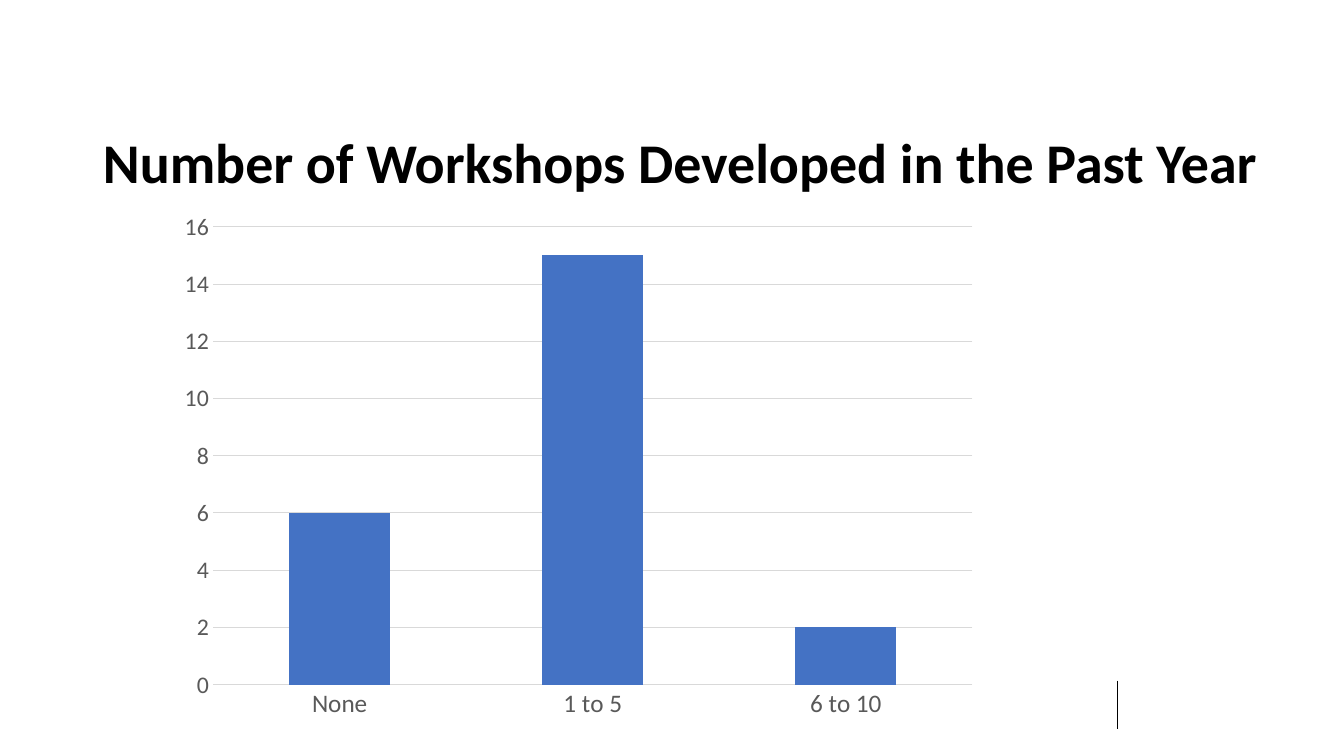
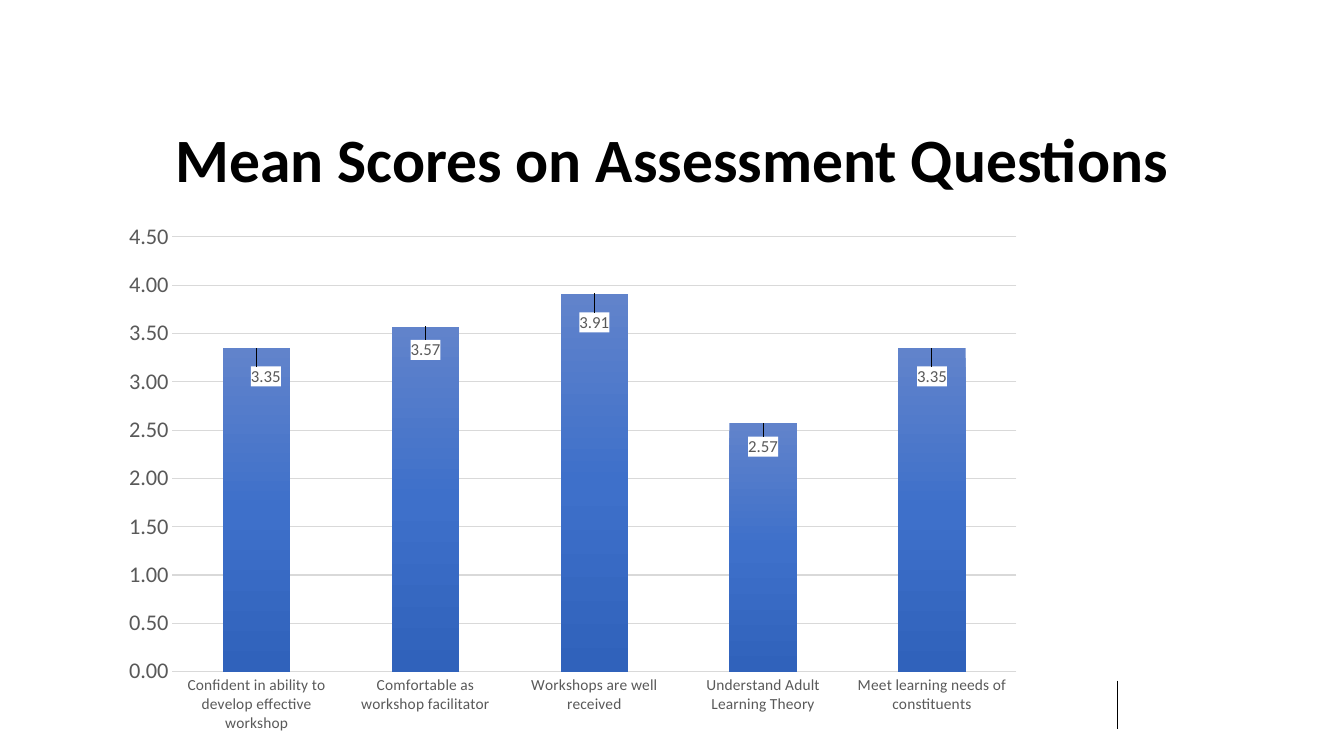
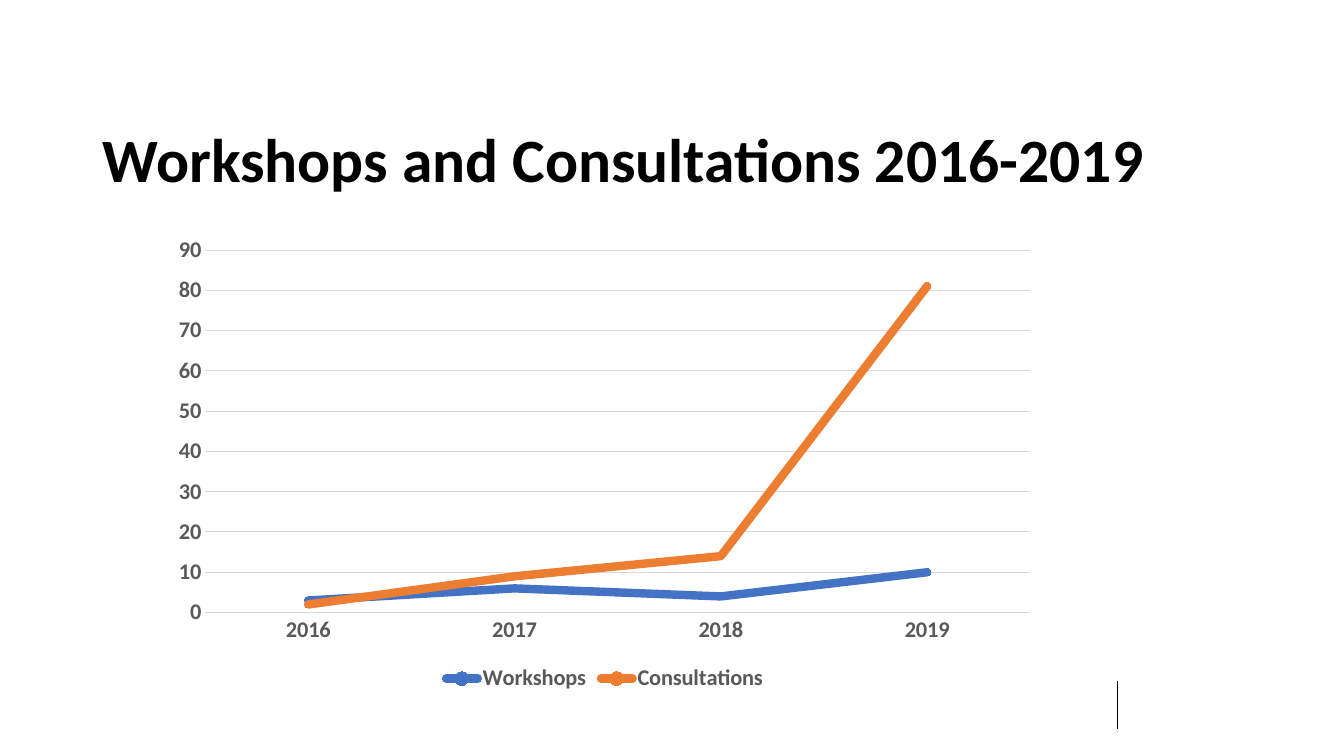
"""Build three slides of workshop assessment charts."""
import copy
import dataclasses
import typing

import pptx
import pptx.chart.data
import pptx.dml.color
import pptx.enum.chart
import pptx.enum.shapes
import pptx.enum.text
import pptx.oxml
import pptx.oxml.ns
import pptx.util

Cm = pptx.util.Cm
Pt = pptx.util.Pt
qn = pptx.oxml.ns.qn
ChartType = pptx.enum.chart.XL_CHART_TYPE
Align = pptx.enum.text.PP_ALIGN

FONT = "Calibri"
BLACK, GREY, GRID, WHITE = "000000", "595959", "D9D9D9", "FFFFFF"
BLUE, ORANGE = "4472C4", "ED7D31"
BAR_GRADIENT = ((0, "6183CB"), (50, "3E70CA"), (100, "3062BB"))
TITLE_LEFT, TITLE_TOP, TITLE_WIDTH, TITLE_HEIGHT = 2.34, 2.54, 29.21, 2.51


@dataclasses.dataclass(frozen=True)
class Series:
    name: str
    values: tuple[float, ...]
    color: str = BLUE


@dataclasses.dataclass(frozen=True)
class ChartSlide:
    title: str
    box: tuple[float, float, float, float]
    categories: tuple[str, ...]
    series: tuple[Series, ...]
    category_size: int
    value_size: int
    kind: ChartType = ChartType.COLUMN_CLUSTERED
    title_size: int = 44
    title_width: float = TITLE_WIDTH
    title_align: Align = Align.LEFT
    bold: bool = False
    baseline: float = 0
    number_format: str = "General"
    label_offsets: tuple[tuple[float, float], ...] = ()


CHART_SLIDES = (
    ChartSlide(
        title="Number of Workshops Developed in the Past Year",
        box=(4.24, 5.08, 20.68, 13.31),
        categories=("None", "1 to 5", "6 to 10"),
        series=(Series("Series 1", (6, 15, 2)),),
        category_size=18,
        value_size=17,
        title_size=40,
        title_width=30.18,
    ),
    ChartSlide(
        title="Mean Scores on Assessment Questions",
        box=(2.79, 5.36, 23.29, 13.36),
        categories=(
            "Confident in ability to develop effective workshop",
            "Comfortable as workshop facilitator",
            "Workshops are well received",
            "Understand Adult Learning Theory",
            "Meet learning needs of constituents",
        ),
        series=(Series("Series 1", (3.35, 3.57, 3.91, 2.57, 3.35)),),
        category_size=11,
        value_size=16,
        title_align=Align.CENTER,
        baseline=1,
        number_format="0.00",
        label_offsets=((0.01, 0.08), (0, 0.07), (0, 0.08), (0, 0.07), (0, 0.08)),
    ),
    ChartSlide(
        title="Workshops and Consultations 2016-2019",
        box=(4.06, 5.72, 22.35, 11.84),
        categories=("2016", "2017", "2018", "2019"),
        series=(
            Series("Workshops", (3, 6, 4, 10)),
            Series("Consultations", (2, 9, 14, 81), ORANGE),
        ),
        category_size=16,
        value_size=16,
        kind=ChartType.LINE_MARKERS,
        bold=True,
        baseline=0.75,
    ),
)


def rgb(color: str) -> pptx.dml.color.RGBColor:
    """Turn a hex string into a colour."""
    return pptx.dml.color.RGBColor.from_string(color)


def paint(fill: typing.Any, color: str) -> None:
    """Give a fill one solid colour."""
    fill.solid()
    fill.fore_color.rgb = rgb(color)


def set_font(font: typing.Any, size: float, color: str, bold: bool = False) -> None:
    """Set face, size, colour and weight of a font."""
    font.name, font.size, font.bold = FONT, Pt(size), bold
    font.color.rgb = rgb(color)


def set_line(line: typing.Any, color: str, width: float) -> None:
    """Draw a line in one colour, or hide it at zero width."""
    if width:
        paint(line.fill, color)
        line.width = Pt(width)
    else:
        line.fill.background()


def add_master_rule(presentation: typing.Any, slide: typing.Any) -> None:
    """Put the short footer rule on the slide master."""
    rule = slide.shapes.add_connector(
        pptx.enum.shapes.MSO_CONNECTOR.STRAIGHT, Cm(28.17), Cm(17.15), Cm(28.17), Cm(18.36)
    )
    set_line(rule.line, BLACK, 0.5)
    rule.element.spPr.append(pptx.oxml.parse_xml(f"<a:effectLst {pptx.oxml.ns.nsdecls('a')}/>"))
    presentation.slide_master.element.cSld.spTree.append(rule.element)


def write_title(slide: typing.Any, content: ChartSlide) -> None:
    """Fill and format the title placeholder."""
    title = slide.shapes.title
    title.left, title.top = Cm(TITLE_LEFT), Cm(TITLE_TOP)
    title.width, title.height = Cm(content.title_width), Cm(TITLE_HEIGHT)
    frame = title.text_frame
    frame.word_wrap = True
    frame.auto_size = pptx.enum.text.MSO_AUTO_SIZE.NONE
    frame.vertical_anchor = pptx.enum.text.MSO_ANCHOR.BOTTOM
    paragraph = frame.paragraphs[0]
    paragraph.alignment = content.title_align
    paragraph.line_spacing = 0.9
    run = paragraph.add_run()
    run.text = content.title
    set_font(run.font, content.title_size, BLACK, True)


def format_axes(chart: typing.Any, content: ChartSlide) -> None:
    """Format both axes and the gridlines."""
    axes = (
        (chart.category_axis, content.category_size, content.baseline),
        (chart.value_axis, content.value_size, 0),
    )
    for axis, size, width in axes:
        axis.major_tick_mark = axis.minor_tick_mark = pptx.enum.chart.XL_TICK_MARK.NONE
        set_font(axis.tick_labels.font, size, GREY, content.bold)
        set_line(axis.format.line, GRID, width)
    chart.value_axis.has_major_gridlines = True
    set_line(chart.value_axis.major_gridlines.format.line, GRID, 0.75)
    labels = chart.value_axis.tick_labels
    labels.number_format, labels.number_format_is_linked = content.number_format, False


def shade_bars(bars: typing.Any) -> None:
    """Replace the solid fill of the bars with the vertical gradient."""
    stops = "".join(
        f'<a:gs pos="{place * 1000}"><a:srgbClr val="{color}"/></a:gs>'
        for place, color in BAR_GRADIENT
    )
    gradient = pptx.oxml.parse_xml(
        f"<a:gradFill {pptx.oxml.ns.nsdecls('a')}><a:gsLst>{stops}</a:gsLst>"
        '<a:lin ang="5400000" scaled="0"/></a:gradFill>'
    )
    solid = bars.format.element.spPr.find(qn("a:solidFill")) if hasattr(
        bars.format, "element"
    ) else next(bars.points[0].data_label and bars.format.fill and bars_element(bars).iter(qn("a:solidFill")))
    solid.getparent().replace(solid, gradient)


def bars_element(bars: typing.Any) -> typing.Any:
    """Return the XML element of a series."""
    return bars.data_labels and bars._element


def label_bars(bars: typing.Any, content: ChartSlide) -> None:
    """Show each value on white, shifted down into its bar."""
    labels = bars.data_labels
    labels.show_value = True
    labels.number_format, labels.number_format_is_linked = content.number_format, False
    set_font(labels.font, 12, GREY)
    outside_end = pptx.enum.chart.XL_LABEL_POSITION.OUTSIDE_END
    labels.position = outside_end
    for index in range(len(content.label_offsets)):
        bars.points[index].data_label.position = outside_end
    group = bars_element(bars).find(qn("c:dLbls"))
    group.find(qn("c:numFmt")).addnext(
        pptx.oxml.parse_xml(
            f"<c:spPr {pptx.oxml.ns.nsdecls('c', 'a')}><a:solidFill>"
            f'<a:srgbClr val="{WHITE}"/></a:solidFill></c:spPr>'
        )
    )
    shared = [group.find(qn(tag)) for tag in ("c:txPr", "c:spPr", "c:numFmt")]
    for label, (x, y) in zip(group.findall(qn("c:dLbl")), content.label_offsets):
        index = label.find(qn("c:idx"))
        for old in [label.find(qn(part)) for part in ("c:txPr", "c:spPr", "c:numFmt")]:
            if old is not None:
                label.remove(old)
        for part in shared:
            index.addnext(copy.deepcopy(part))
        index.addnext(
            pptx.oxml.parse_xml(
                f"<c:layout {pptx.oxml.ns.nsdecls('c')}><c:manualLayout>"
                f'<c:x val="{x}"/><c:y val="{y}"/></c:manualLayout></c:layout>'
            )
        )


def format_line_series(trend: typing.Any, color: str) -> None:
    """Draw a thick round-ended line with small markers."""
    trend.smooth = False
    set_line(trend.format.line, color, 6)
    next(bars_element(trend).iter(qn("a:ln"))).set("cap", "rnd")
    trend.marker.style = pptx.enum.chart.XL_MARKER_STYLE.CIRCLE
    trend.marker.size = 5
    paint(trend.marker.format.fill, color)
    set_line(trend.marker.format.line, color, 0.75)


def add_legend(chart: typing.Any, content: ChartSlide) -> None:
    """Place the legend below the plot."""
    chart.has_legend = True
    chart.legend.position = pptx.enum.chart.XL_LEGEND_POSITION.BOTTOM
    chart.legend.include_in_layout = False
    set_font(chart.legend.font, 16, GREY, content.bold)


def draw_chart(slide: typing.Any, content: ChartSlide) -> None:
    """Add the chart and format its series."""
    data = pptx.chart.data.CategoryChartData()
    data.categories = content.categories
    for series in content.series:
        data.add_series(series.name, series.values)
    box = [Cm(length) for length in content.box]
    chart = slide.shapes.add_chart(content.kind, *box, data).chart
    set_font(chart.font, 10, BLACK)
    chart.has_title = chart.has_legend = False
    format_axes(chart, content)
    plot = chart.plots[0]
    plot.vary_by_categories = False
    if content.kind == ChartType.LINE_MARKERS:
        for trend, series in zip(plot.series, content.series):
            format_line_series(trend, series.color)
        add_legend(chart, content)
        return
    plot.gap_width = 150
    for bars, series in zip(plot.series, content.series):
        paint(bars.format.fill, series.color)
        if content.label_offsets:
            shade_bars(bars)
            label_bars(bars, content)


def main() -> None:
    """Build and save the presentation."""
    presentation = pptx.Presentation()
    presentation.slide_width, presentation.slide_height = Cm(33.87), Cm(19.05)
    layout = presentation.slide_layouts.get_by_name("Title Only")
    for number, content in enumerate(CHART_SLIDES):
        slide = presentation.slides.add_slide(layout)
        if number == 0:
            add_master_rule(presentation, slide)
        write_title(slide, content)
        draw_chart(slide, content)
    presentation.save("out.pptx")


if __name__ == "__main__":
    main()
